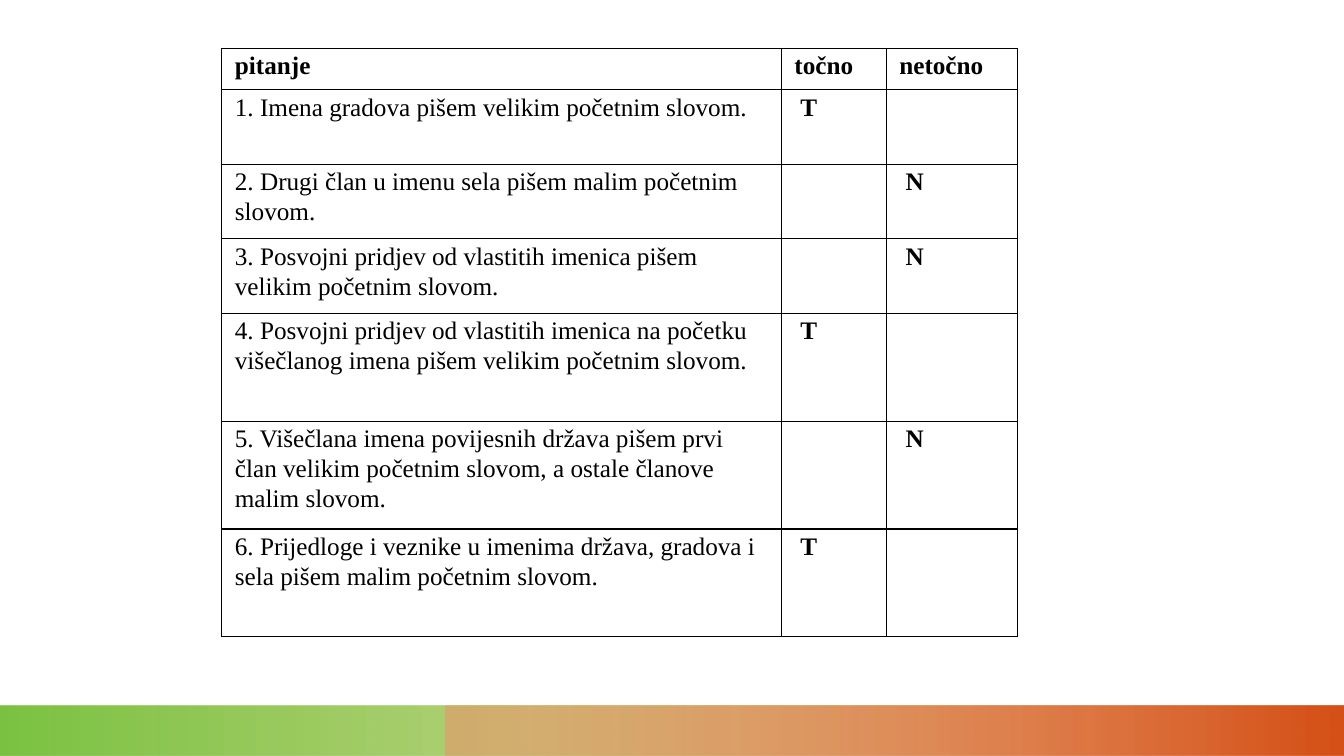
import pptx
import pptx.util
import pptx.dml.color
import pptx.enum.shapes
import pptx.oxml
import pptx.oxml.ns
import lxml.etree

Inches = pptx.util.Inches
Pt = pptx.util.Pt
COLORS = {
    "ink": "000000",
    "green": "64B821",
    "olive": "98AD13",
    "peach": "EF936B",
    "orange": "D55117",
}


def write_text(frame, text, size=18, bold=False, font="Times New Roman", color="ink"):
    paragraph = frame.paragraphs[0]
    paragraph.line_spacing = 1.07
    paragraph.space_after = Pt(8)
    run = paragraph.add_run()
    run.text = text
    run.font.name = font
    run.font.size = Pt(size)
    run.font.bold = bold
    run.font.color.rgb = pptx.dml.color.RGBColor.from_string(COLORS[color])


def add_border(cell, side):
    """Draw a 1 pt line on one side, named as in a:lnL."""
    line = lxml.etree.SubElement(
        cell._tc.get_or_add_tcPr(), pptx.oxml.ns.qn("a:ln" + side), w=str(Pt(1)))
    fill = lxml.etree.SubElement(line, pptx.oxml.ns.qn("a:solidFill"))
    lxml.etree.SubElement(fill, pptx.oxml.ns.qn("a:srgbClr"), val=COLORS["ink"])


presentation = pptx.Presentation()
presentation.slide_width = Inches(13.33)
presentation.slide_height = Inches(7.5)
slide = presentation.slides.add_slide(presentation.slide_layouts[6])

# Footer bands: left, width, then (position, colour, opacity in percent)
footer_bands = [
    (0, 13.33, [(0, "green", 85), (0.86, "olive", 28)]),
    (4.42, 8.91, [(0.09, "peach", 55), (0.99, "orange", 100)]),
]
for left, width, stops in footer_bands:
    band = slide.shapes.add_shape(
        pptx.enum.shapes.MSO_SHAPE.RECTANGLE,
        Inches(left), Inches(7), Inches(width), Inches(0.5))
    band.shadow.inherit = False
    band.line.fill.background()
    band.fill.gradient()
    band.fill.gradient_angle = 0
    for stop, (position, color, opacity) in zip(band.fill.gradient_stops, stops):
        stop.position = position
        stop.color.rgb = pptx.dml.color.RGBColor.from_string(COLORS[color])
    for rgb, (position, color, opacity) in zip(
            band._element.spPr.iter(pptx.oxml.ns.qn("a:srgbClr")), stops):
        lxml.etree.SubElement(rgb, pptx.oxml.ns.qn("a:alpha"), val=str(opacity * 1000))

# Quiz table: each statement with its answer, T (true) or N (false)
headings = ["pitanje", "točno", "netočno"]
statements = [
    ("1. Imena gradova pišem velikim početnim slovom.", "T"),
    ("2. Drugi član u imenu sela pišem malim početnim slovom.", "N"),
    ("3. Posvojni pridjev od vlastitih imenica pišem velikim početnim slovom.", "N"),
    ("4. Posvojni pridjev od vlastitih imenica na početku višečlanog imena "
     "pišem velikim početnim slovom.", "T"),
    ("5. Višečlana imena povijesnih država pišem prvi član velikim početnim "
     "slovom, a ostale članove malim slovom.", "N"),
    ("6. Prijedloge i veznike u imenima država, gradova i sela pišem malim "
     "početnim slovom.", "T"),
]
rows = [headings]
for statement, answer in statements:
    rows.append([statement] + [" " + mark if mark == answer else "" for mark in "TN"])

column_widths = [5.55, 1.04, 1.3]
row_heights = [0.41] + [0.74] * 3 + [1.07] * 3
quiz = slide.shapes.add_table(
    len(rows), len(headings), Inches(2.2), Inches(0.48),
    Inches(sum(column_widths)), Inches(sum(row_heights))).table
quiz.first_row = False
quiz.horz_banding = False
for column, width in zip(quiz.columns, column_widths):
    column.width = Inches(width)
for row, height in zip(quiz.rows, row_heights):
    row.height = Inches(height)

for row_number, row in enumerate(rows):
    for column_number, text in enumerate(row):
        cell = quiz.cell(row_number, column_number)
        cell.margin_left = cell.margin_right = Inches(0.13)
        cell.margin_top = Inches(0.02)
        cell.margin_bottom = 0
        for side in "LRTB":
            add_border(cell, side)
        cell.fill.background()
        if text:
            write_text(cell.text_frame, text, bold=row_number == 0 or column_number > 0)

presentation.save("out.pptx")
